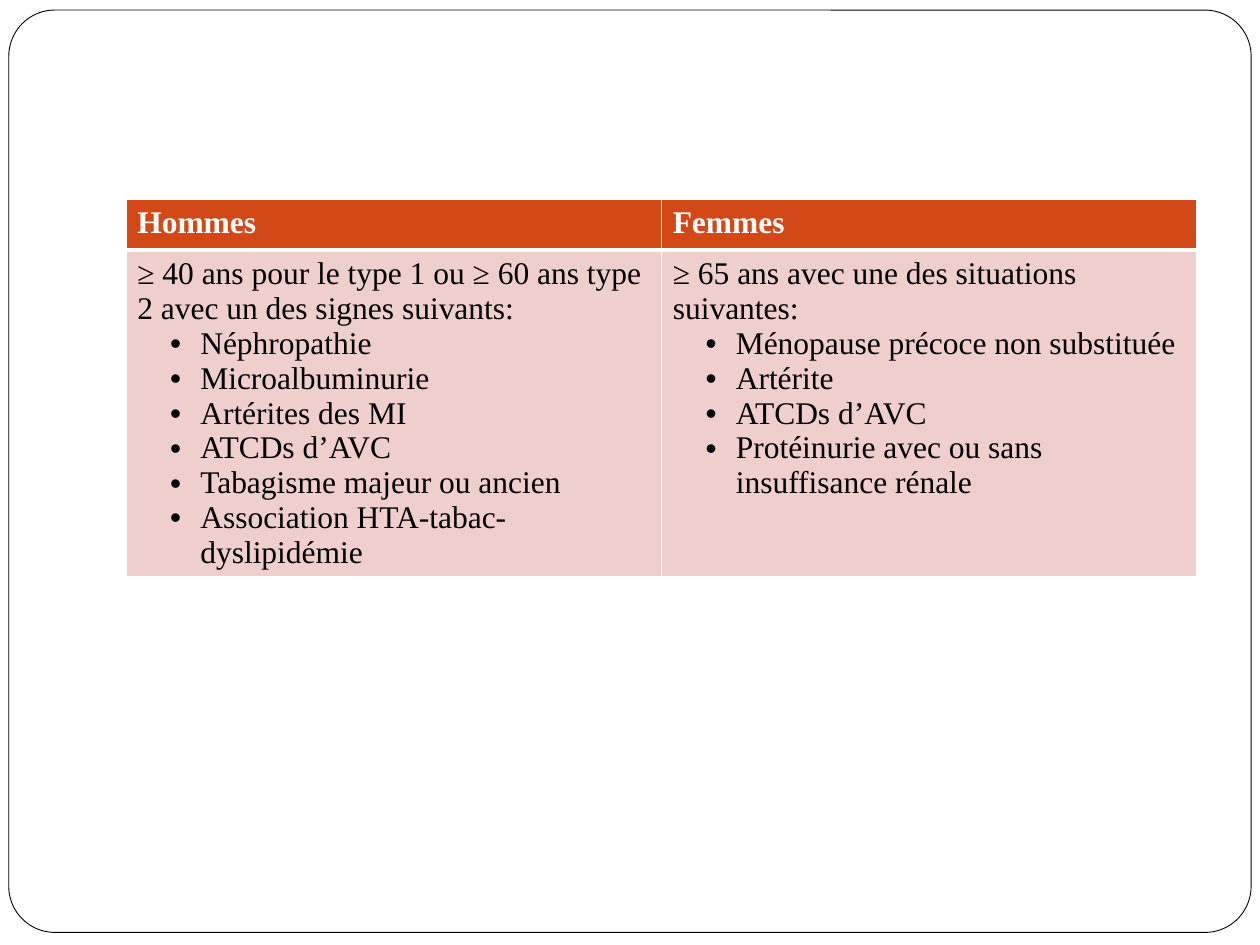
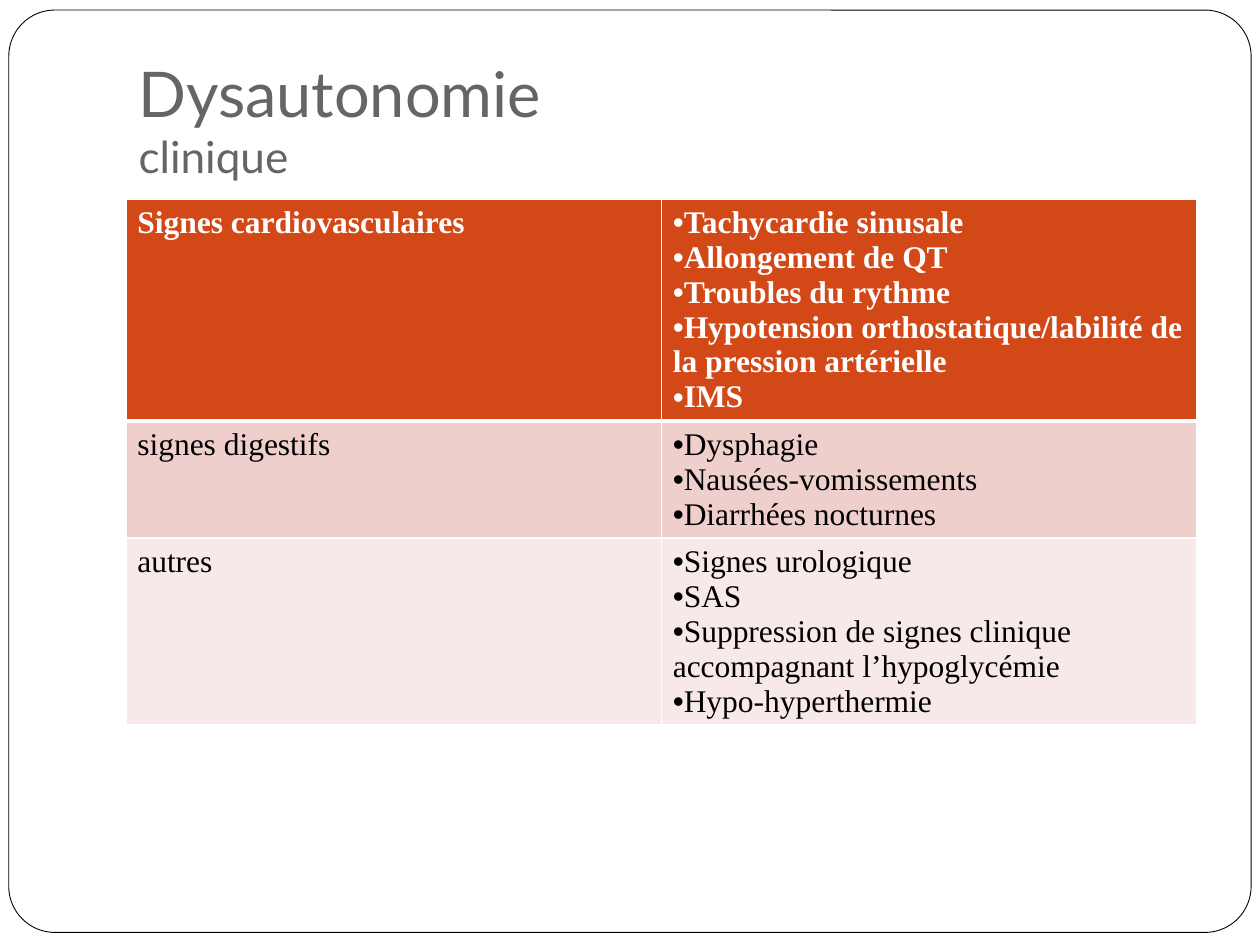
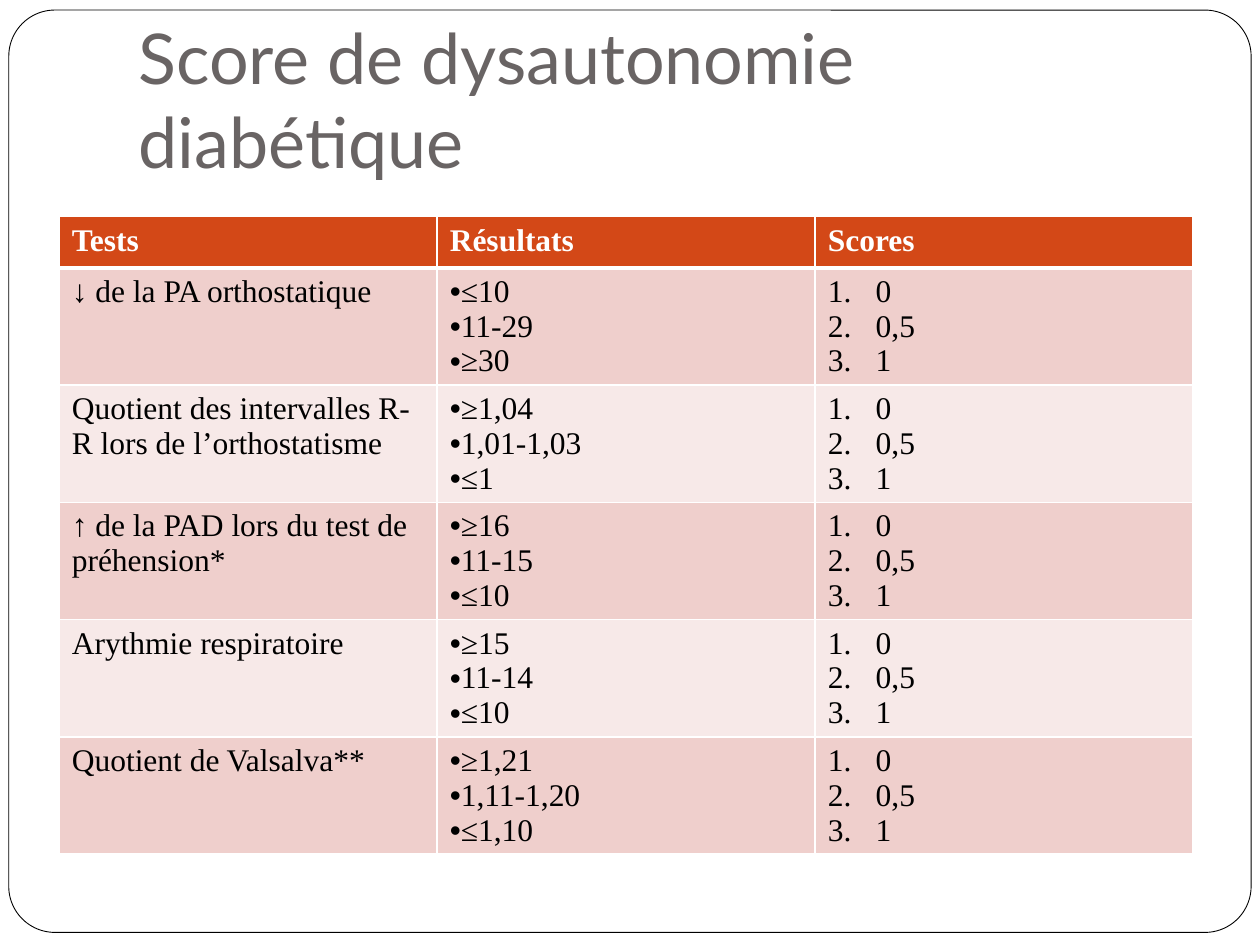
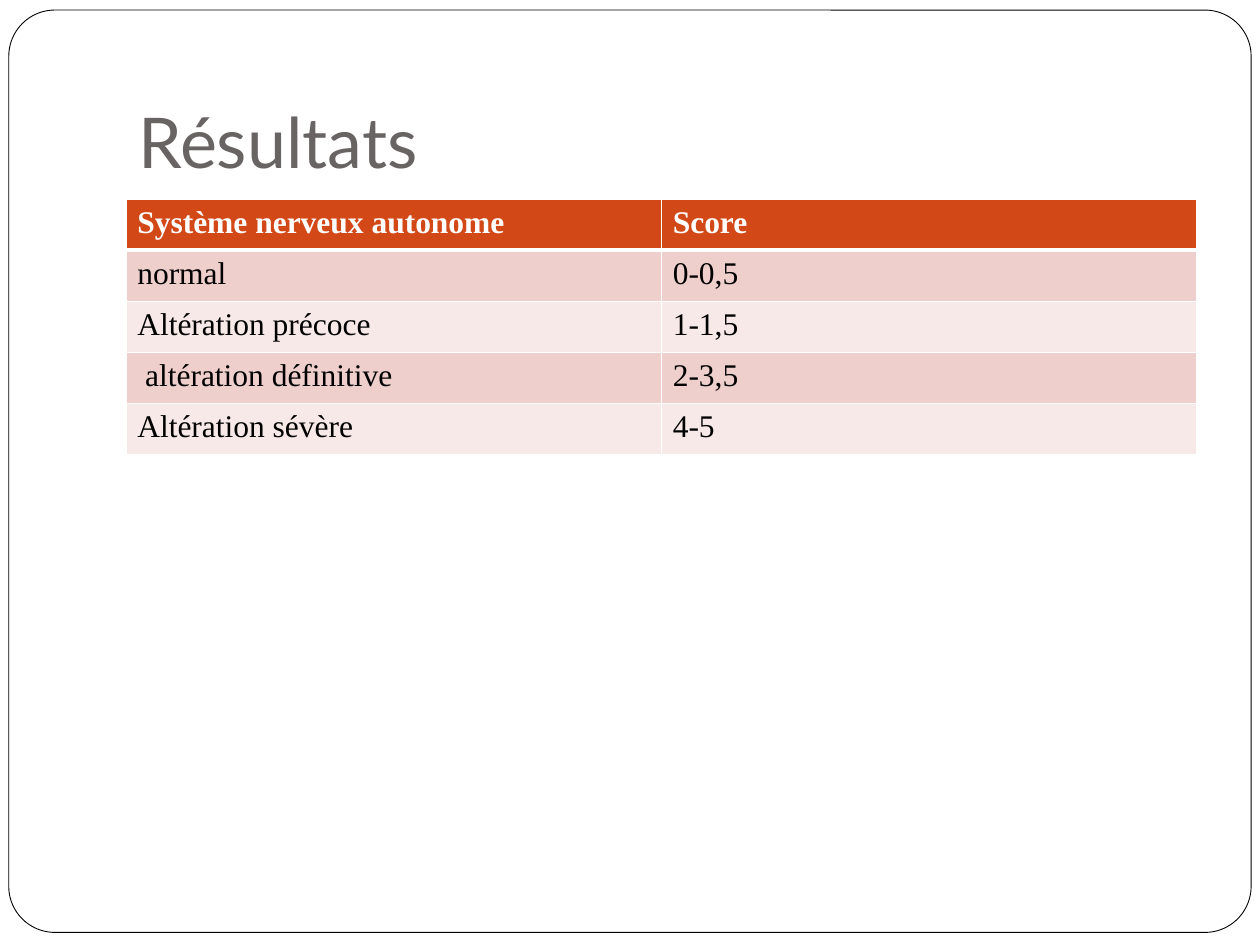
from dataclasses import dataclass

from lxml.etree import SubElement
from pptx import Presentation
from pptx.dml.color import RGBColor
from pptx.enum.shapes import MSO_SHAPE
from pptx.enum.text import MSO_ANCHOR, MSO_AUTO_SIZE, PP_ALIGN
from pptx.oxml.ns import qn
from pptx.util import Inches, Pt


@dataclass(frozen=True)
class Theme:
    header: str = "D34817"
    bands: tuple = ("EFCFCC", "F7E9E8")
    white: str = "FFFFFF"
    black: str = "000000"
    title: str = "696464"
    title_font: str = "Lato"
    table_font: str = "Times New Roman"
    title_size: float = 40
    split_title_size: float = 36
    subtitle_size: float = 25.2
    table_size: float = 18
    rule: float = 1
    header_rule: float = 3


THEME = Theme()
LEFT, CONTENT_WIDTH = 1, 8.5
TABLE_TOP = 1.58
ROW_HEIGHT = Pt(29.2)
TITLE_ONLY, BLANK = 5, 6

# List styles: left margin, first-line indent, marker tag and its attributes
PLAIN_BULLET = (0, 0, "a:buChar", {"char": "•"})
INDENTED_BULLET = (0.5, -0.24, "a:buChar", {"char": "•"})
NUMBER = (0.38, -0.38, "a:buAutoNum", {"type": "arabicPeriod"})


def color(code):
    return RGBColor.from_string(code)


def bullets(*items):
    return [(item, PLAIN_BULLET) for item in items]


def indented(intro, *items):
    return [(intro, None)] + [(item, INDENTED_BULLET) for item in items]


def numbers(*items):
    return [(item, NUMBER) for item in items]


def set_font(font, name, size, code, bold=False):
    font.name, font.size, font.bold = name, Pt(size), bold
    font.color.rgb = color(code)


def set_marker(para, style):
    margin, indent, tag, attributes = style
    properties = para._p.get_or_add_pPr()
    properties.set("marL", str(Inches(margin)))
    properties.set("indent", str(Inches(indent)))
    SubElement(properties, qn("a:buFont"), typeface="Arial")
    SubElement(properties, qn(tag), attributes)


def set_borders(cell, bottom):
    properties = cell._tc.get_or_add_tcPr()
    widths = {"a:lnL": THEME.rule, "a:lnR": THEME.rule, "a:lnT": THEME.rule, "a:lnB": bottom}
    for position, (tag, width) in enumerate(widths.items()):
        line = SubElement(properties, qn(tag), w=str(Pt(width)))
        fill = SubElement(line, qn("a:solidFill"))
        SubElement(fill, qn("a:srgbClr"), val=THEME.white)
        properties.insert(position, line)


def place_master_title(deck):
    title = deck.slide_master.placeholders[0]
    title.left, title.top = Inches(LEFT), Inches(0.3)
    title.width, title.height = Inches(CONTENT_WIDTH), Inches(1.25)
    text = title.text_frame
    text.vertical_anchor = MSO_ANCHOR.BOTTOM
    text.auto_size = MSO_AUTO_SIZE.NONE
    text.margin_bottom = Inches(0.1)


def add_page(deck, layout=BLANK):
    """Add a slide with the rounded frame behind everything else."""
    page = deck.slides.add_slide(deck.slide_layouts[layout])
    frame = page.shapes.add_shape(MSO_SHAPE.ROUNDED_RECTANGLE, Inches(0.07), Inches(0.08),
                                  Inches(9.86), Inches(7.32))
    frame.adjustments[0] = 0.05
    frame.shadow.inherit = False
    frame.fill.solid()
    frame.fill.fore_color.rgb = color(THEME.white)
    frame.line.color.rgb = color(THEME.black)
    frame.line.width = Pt(0.5)
    page.shapes.element.insert(2, frame.element)
    return page


def add_titled_page(deck, heading, subtitle=None):
    page = add_page(deck, TITLE_ONLY)
    para = page.shapes.title.text_frame.paragraphs[0]
    para.alignment = PP_ALIGN.LEFT
    size = THEME.split_title_size if subtitle else THEME.title_size
    set_font(para.font, THEME.title_font, size, THEME.title)
    para.add_run().text = heading
    if subtitle:
        para.add_line_break()
        span = para.add_run()
        span.text = subtitle
        span.font.size = Pt(THEME.subtitle_size)
    return page


def fill_cell(cell, content, row, inset):
    is_header = row == 0
    cell.margin_left = cell.margin_right = Inches(inset)
    cell.fill.solid()
    cell.fill.fore_color.rgb = color(THEME.header if is_header else THEME.bands[(row - 1) % 2])
    set_borders(cell, THEME.header_rule if is_header else THEME.rule)
    lines = [(content, None)] if isinstance(content, str) else content
    cell.text = "\n".join(text for text, _ in lines)
    for para, (_, style) in zip(cell.text_frame.paragraphs, lines):
        if style:
            set_marker(para, style)
        set_font(para.font, THEME.table_font, THEME.table_size,
                 THEME.white if is_header else THEME.black, is_header)


def add_grid(page, rows, left=LEFT, top=TABLE_TOP, width=CONTENT_WIDTH, inset=0.09):
    """Add a banded table with equal columns; rows grow with their text."""
    frame = page.shapes.add_table(len(rows), len(rows[0]), Inches(left), Inches(top),
                                  Inches(width), ROW_HEIGHT * len(rows))
    for row, contents in enumerate(rows):
        for column, content in enumerate(contents):
            fill_cell(frame.table.cell(row, column), content, row, inset)


def main():
    deck = Presentation()
    deck.slide_width, deck.slide_height = Inches(10), Inches(7.5)
    place_master_title(deck)

    page = add_page(deck)
    add_grid(page, [
        ("Hommes", "Femmes"),
        (indented("≥ 40 ans pour le type 1 ou ≥ 60 ans type 2 avec un des signes suivants:",
                  "Néphropathie", "Microalbuminurie", "Artérites des MI", "ATCDs d’AVC",
                  "Tabagisme majeur ou ancien", "Association HTA-tabac-dyslipidémie"),
         indented("≥ 65 ans avec une des situations suivantes:",
                  "Ménopause précoce non substituée", "Artérite", "ATCDs d’AVC",
                  "Protéinurie avec ou sans insuffisance rénale")),
    ])

    page = add_titled_page(deck, "Dysautonomie", "clinique")
    add_grid(page, [
        ("Signes cardiovasculaires",
         bullets("Tachycardie sinusale", "Allongement de QT", "Troubles du rythme",
                 "Hypotension orthostatique/labilité de la pression artérielle", "IMS")),
        ("signes digestifs",
         bullets("Dysphagie", "Nausées-vomissements", "Diarrhées nocturnes")),
        ("autres",
         bullets("Signes urologique", "SAS",
                 "Suppression de signes clinique accompagnant l’hypoglycémie",
                 "Hypo-hyperthermie")),
    ])

    page = add_titled_page(deck, "Score de dysautonomie diabétique")
    tests = [
        ("↓ de la PA orthostatique", ("≤10", "11-29", "≥30")),
        ("Quotient des intervalles R-R lors de l’orthostatisme", ("≥1,04", "1,01-1,03", "≤1")),
        ("↑ de la PAD lors du test de préhension*", ("≥16", "11-15", "≤10")),
        ("Arythmie respiratoire", ("≥15", "11-14", "≤10")),
        ("Quotient de Valsalva**", ("≥1,21", "1,11-1,20", "≤1,10")),
    ]
    scores = numbers("0", "0,5", "1")
    add_grid(page, [("Tests", "Résultats", "Scores")]
             + [(test, bullets(*results), scores) for test, results in tests],
             left=0.47, top=1.72, width=9, inset=0.1)

    page = add_titled_page(deck, "Résultats")
    add_grid(page, [
        ("Système nerveux autonome", "Score"),
        ("normal", "0-0,5"),
        ("Altération précoce", "1-1,5"),
        (" altération définitive", "2-3,5"),
        ("Altération sévère", "4-5"),
    ])

    deck.save("out.pptx")


if __name__ == "__main__":
    main()
